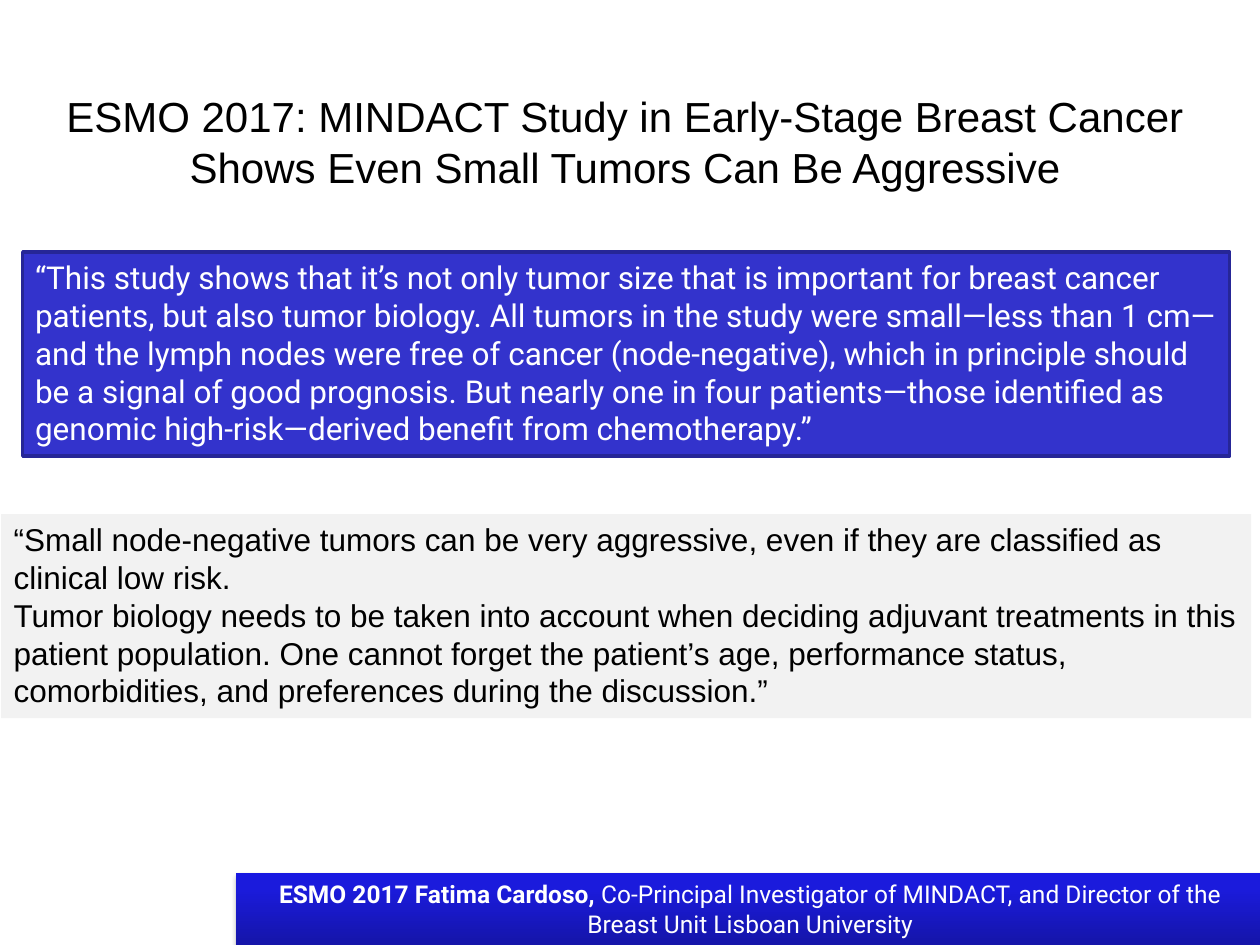
from dataclasses import dataclass
from typing import Optional

from lxml.etree import SubElement
from pptx import Presentation
from pptx.dml.color import RGBColor
from pptx.enum.shapes import MSO_SHAPE as Preset
from pptx.enum.text import MSO_ANCHOR as Anchor, MSO_AUTO_SIZE as AutoSize, PP_ALIGN as Align
from pptx.oxml.ns import qn
from pptx.util import Pt

PX = 9144
COLORS = {
    "white": "FFFFFF",
    "black": "000000",
    "quote": "3333CC",
    "quote_edge": "262697",
    "gray": "F2F2F2",
}
FOOTER_STOPS = [(0, "1515A9"), (80, "1B1BDC"), (100, "1818E1")]


@dataclass
class Span:
    text: str
    bold: bool = False


@dataclass
class Panel:
    left: int
    top: int
    width: int
    height: int
    paragraphs: list[list[Span]]
    font: str
    size: int
    ink: str
    fill: Optional[str] = None
    edge: Optional[str] = None
    align: Align = Align.LEFT


TITLE = Panel(
    0, 67, 992, 91,
    [[Span("ESMO 2017: MINDACT Study in Early-Stage Breast Cancer "
           "Shows Even Small Tumors Can Be Aggressive")]],
    "Arial", 24, "black", "white", align=Align.CENTER,
)
QUOTES = [
    Panel(
        18, 200, 958, 162,
        [[Span("“This study shows that it’s not only tumor size that is important for "
               "breast cancer patients, but also tumor biology. All tumors in the study "
               "were small—less than 1 cm—and the lymph nodes were free of cancer "
               "(node-negative), which in principle should be a signal of good prognosis. "
               "But nearly one in four patients—those identified as genomic "
               "high-risk—derived benefit from chemotherapy.”")]],
        "Roboto", 18, "white", "quote", "quote_edge",
    ),
    Panel(
        1, 408, 992, 162,
        [[Span("“Small node-negative tumors can be very aggressive, even if they are "
               "classified as clinical low risk.")],
         [Span("Tumor biology needs to be taken into account when deciding adjuvant "
               "treatments in this patient population. One cannot forget the patient’s "
               "age, performance status, comorbidities, and preferences during the "
               "discussion.”")]],
        "Arial", 18, "black", "gray",
    ),
]
FOOTER = Panel(
    187, 693, 817, 57,
    [[Span("ESMO 2017 Fatima Cardoso, ", True),
      Span("Co-Principal Investigator of MINDACT, and Director of the "
           "Breast Unit Lisboan University")]],
    "Roboto", 14, "white", align=Align.CENTER,
)


def rgb(name: str) -> RGBColor:
    return RGBColor.from_string(COLORS[name])


def write_text(box, panel: Panel) -> None:
    frame = box.text_frame
    frame.word_wrap = True
    frame.auto_size = AutoSize.SHAPE_TO_FIT_TEXT
    frame.vertical_anchor = Anchor.TOP
    for index, spans in enumerate(panel.paragraphs):
        para = frame.add_paragraph() if index else frame.paragraphs[0]
        para.alignment = panel.align
        for span in spans:
            run = para.add_run()
            run.text = span.text
            run.font.name = panel.font
            run.font.size = Pt(panel.size)
            run.font.bold = span.bold
            run.font.color.rgb = rgb(panel.ink)


def style_panel(box, panel: Panel) -> None:
    box.left, box.top = panel.left * PX, panel.top * PX
    box.width, box.height = panel.width * PX, panel.height * PX
    if panel.fill:
        box.fill.solid()
        box.fill.fore_color.rgb = rgb(panel.fill)
    if panel.edge:
        box.line.color.rgb = rgb(panel.edge)
        box.line.width = Pt(2)
    else:
        box.line.fill.background()
    write_text(box, panel)


def add_panel(page, panel: Panel):
    box = page.shapes.add_shape(Preset.RECTANGLE, 0, 0, PX, PX)
    box.shadow.inherit = False
    style_panel(box, panel)
    return box


def add_color(parent, value: str):
    return SubElement(parent, qn("a:srgbClr"), val=value)


def apply_gradient(box, stops: list[tuple[int, str]]) -> None:
    box.fill.gradient()
    box.fill.gradient_angle = 90
    stop_list = box.element.spPr.find(qn("a:gradFill")).find(qn("a:gsLst"))
    for stop in list(stop_list):
        stop_list.remove(stop)
    for position, value in stops:
        add_color(SubElement(stop_list, qn("a:gs"), pos=str(position * 1000)), value)


def apply_shadow(box) -> None:
    effects = box.element.spPr.find(qn("a:effectLst"))
    shadow = SubElement(
        effects, qn("a:outerShdw"), blurRad=str(Pt(3.1)), dist=str(Pt(1.8)),
        dir="5400000", rotWithShape="0",
    )
    SubElement(add_color(shadow, COLORS["black"]), qn("a:alpha"), val="35000")


def main() -> None:
    deck = Presentation()
    deck.slide_width, deck.slide_height = 1000 * PX, 750 * PX
    page = deck.slides.add_slide(deck.slide_layouts[5])
    style_panel(page.shapes.title, TITLE)
    for quote in QUOTES:
        add_panel(page, quote)
    footer = add_panel(page, FOOTER)
    apply_gradient(footer, FOOTER_STOPS)
    apply_shadow(footer)
    deck.save("out.pptx")


if __name__ == "__main__":
    main()
